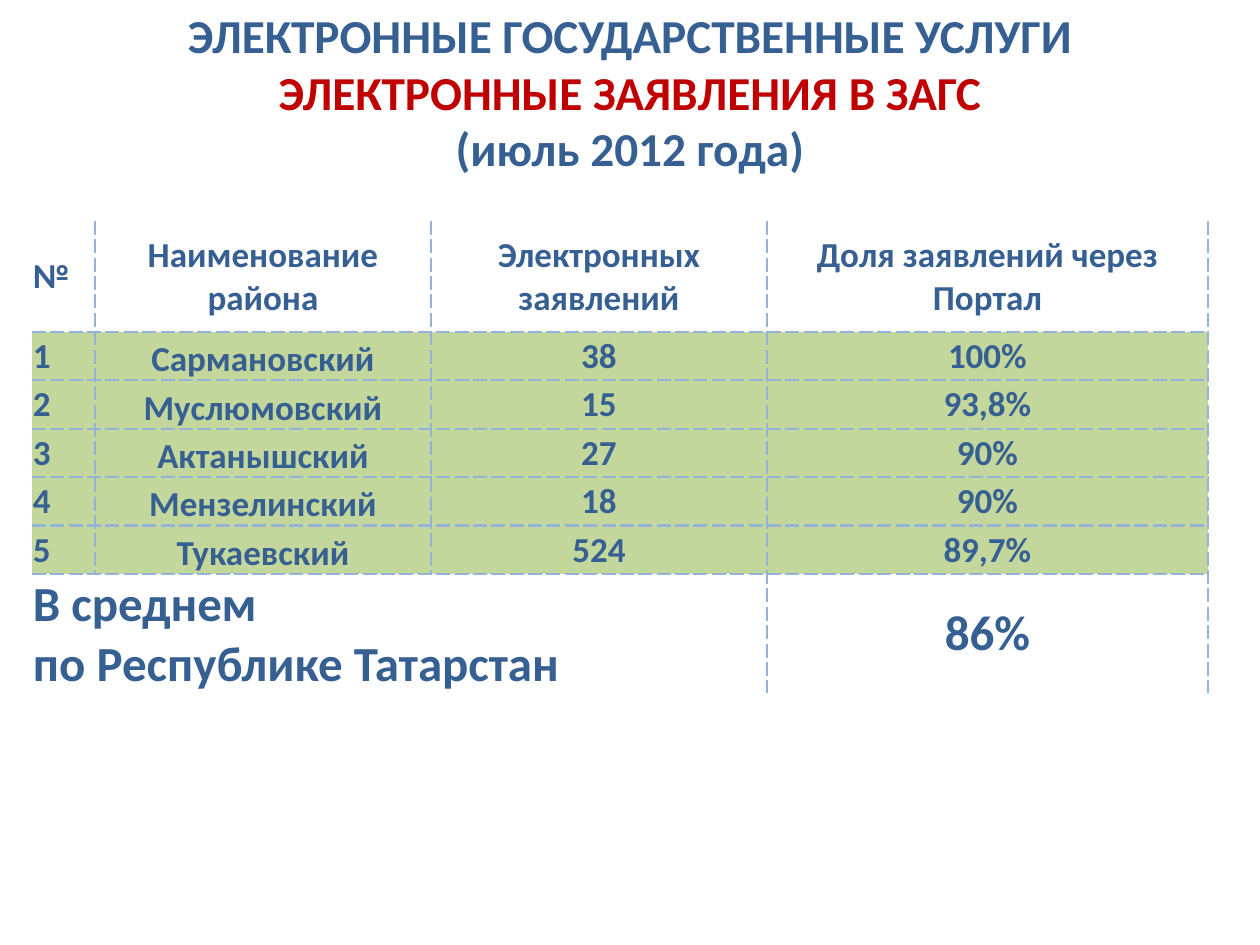
from dataclasses import dataclass

from lxml.etree import SubElement as Sub
from pptx import Presentation
from pptx.dml.color import RGBColor as Rgb
from pptx.enum.text import MSO_ANCHOR as Anchor, MSO_AUTO_SIZE as Fit, PP_ALIGN as Align
from pptx.oxml.ns import qn
from pptx.util import Pt


@dataclass(frozen=True)
class Theme:
    """Colours, font and type sizes of the slide."""
    font: str = "Calibri"
    blue: str = "376092"
    red: str = "C00000"
    green: str = "C3D69B"
    rule: str = "95B3D7"
    head: int = 27
    body: int = 20
    total: int = 28
    line: float = 1.5


THEME = Theme()
SCALE = 914400 / 126
COLS = (63, 336, 336, 441)
HEAD, ROW = 111, 37
NAMES = ("№", "Наименование района", "Электронных заявлений", "Доля заявлений через Портал")
DATA = (
    ("Сармановский", "38", "100%"),
    ("Муслюмовский", "15", "93,8%"),
    ("Актанышский", "27", "90%"),
    ("Мензелинский", "18", "90%"),
    ("Тукаевский", "524", "89,7%"),
)
MEAN = ("В среднем\nпо Республике Татарстан", "", "", "86%")


def px(num):
    """Turn pixels into EMU."""
    return round(num * SCALE)


def write(frame, lines, size, align, space=None):
    """Write (text, colour) lines as paragraphs of a text frame."""
    for i, (text, tint) in enumerate(lines):
        para = frame.add_paragraph() if i else frame.paragraphs[0]
        para.alignment = align
        if space:
            para.line_spacing = space
        run = para.add_run()
        run.text = text
        font = run.font
        font.name, font.size, font.bold = THEME.font, Pt(size), True
        font.color.rgb = Rgb.from_string(tint)


def edge(cell, sides):
    """Draw dashed lines on the given sides of a cell and clear the rest."""
    props = cell._tc.get_or_add_tcPr()
    for side in "LRTB":
        line = Sub(props, qn(f"a:ln{side}"), w=str(Pt(THEME.line)))
        if side in sides:
            fill = Sub(line, qn("a:solidFill"))
            Sub(fill, qn("a:srgbClr"), val=THEME.rule)
            Sub(line, qn("a:prstDash"), val="sysDash")
        else:
            Sub(line, qn("a:noFill"))


def title(slide, box):
    """Place the three centred heading lines."""
    frame = slide.shapes.add_textbox(*map(px, box)).text_frame
    frame.word_wrap = True
    frame.auto_size = Fit.SHAPE_TO_FIT_TEXT
    lines = (
        ("ЭЛЕКТРОННЫЕ ГОСУДАРСТВЕННЫЕ УСЛУГИ", THEME.blue),
        ("ЭЛЕКТРОННЫЕ ЗАЯВЛЕНИЯ В ЗАГС", THEME.red),
        ("(июль 2012 года)", THEME.blue),
    )
    write(frame, lines, THEME.head, Align.CENTER)


def style(cell, text, row, col, last):
    """Fill, rule and write one cell by its place in the grid."""
    inner = 0 < row < last
    name = inner and col == 1
    edge(cell, "R" + "L" * (col > 0) + "T" * (row > 0) + "B" * (row < last))
    if inner:
        cell.fill.solid()
        cell.fill.fore_color.rgb = Rgb.from_string(THEME.green)
    else:
        cell.fill.background()
    cell.margin_left = cell.margin_right = px(9 if name else 1)
    cell.margin_top, cell.margin_bottom = px(0 if name else 1), 0
    cell.vertical_anchor = Anchor.TOP if name else Anchor.MIDDLE
    lines = [(part, THEME.blue) for part in text.split("\n")]
    size = THEME.total if row == last else THEME.body
    align = Align.CENTER if col else Align.LEFT
    write(cell.text_frame, lines, size, align, 1.15 if name else None)


def chart(slide, box):
    """Place the table of districts with its closing average row."""
    body = [(str(i), *vals) for i, vals in enumerate(DATA, 1)]
    rows = [NAMES, *body, MEAN]
    last = len(rows) - 1
    shape = slide.shapes.add_table(len(rows), len(COLS), *map(px, box))
    table = shape.table
    table.first_row = table.horz_banding = False
    for col, wide in zip(table.columns, COLS):
        col.width = px(wide)
    for i, row in enumerate(table.rows):
        row.height = px(ROW if i else HEAD)
    shape.height = px(box[3])
    table.cell(last, 0).merge(table.cell(last, 2))
    for i, vals in enumerate(rows):
        for j, text in enumerate(vals):
            cell = table.cell(i, j)
            if not cell.is_spanned:
                style(cell, text, i, j, last)


def main():
    """Build and save the slide."""
    deck = Presentation()
    deck.slide_width, deck.slide_height = px(1260), px(945)
    slide = deck.slides.add_slide(deck.slide_layouts[6])
    title(slide, (0, 0, 1260, 184))
    chart(slide, (32, 221, sum(COLS), 471))
    deck.save("out.pptx")


if __name__ == "__main__":
    main()
